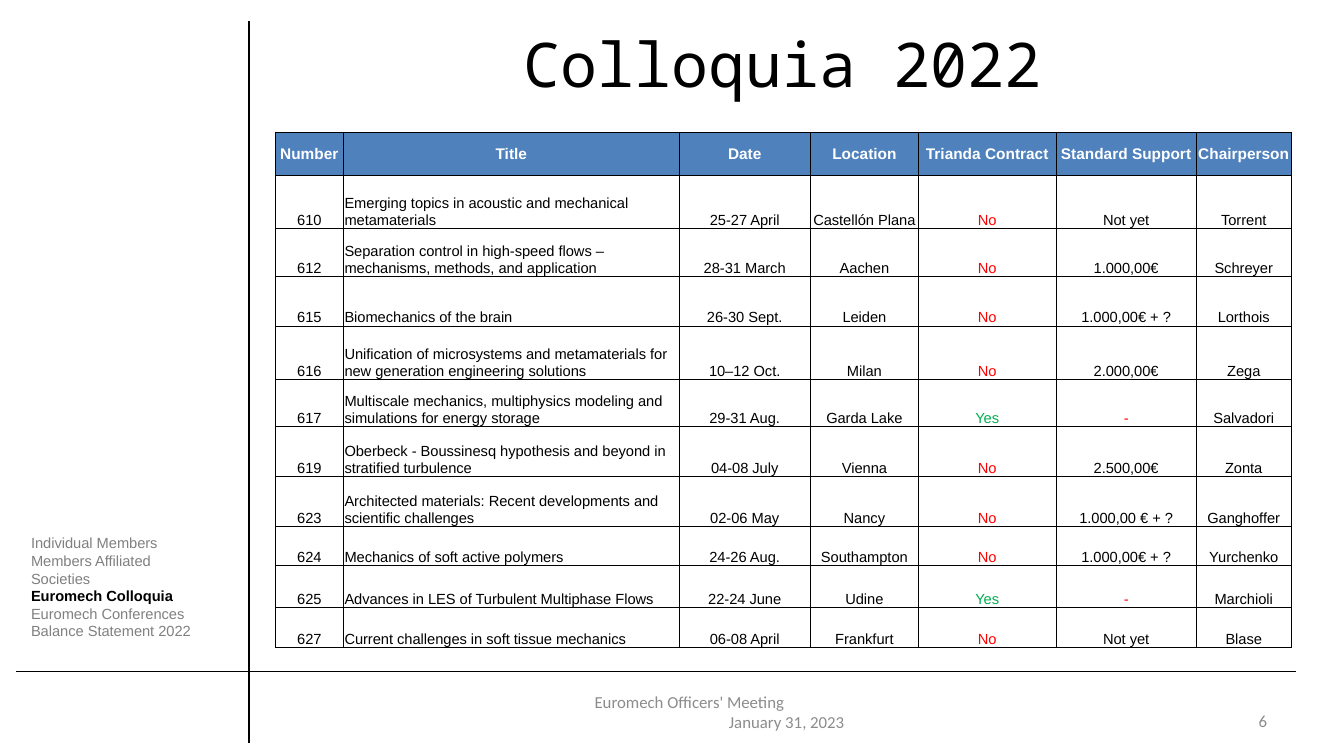
from dataclasses import dataclass

import pptx
import pptx.dml.color
import pptx.enum.dml
import pptx.enum.shapes
import pptx.enum.text
import pptx.oxml
import pptx.oxml.ns
import pptx.util

Pt = pptx.util.Pt
ALIGN = pptx.enum.text.PP_ALIGN
ANCHOR = pptx.enum.text.MSO_ANCHOR
FIT = pptx.enum.text.MSO_AUTO_SIZE

COLORS = {
    "ink": "000000", "white": "FFFFFF", "header": "4F81BD", "muted": "808080",
    "footer": "8C8C8C", "no": "FF0000", "yes": "00B050",
}


@dataclass
class Rule:
    x1: float
    y1: float
    x2: float
    y2: float


@dataclass
class Line:
    text: str
    color: str
    size: float
    font: str = "Arial"
    bold: bool = False
    align: ALIGN = ALIGN.LEFT
    indent: float = 0


@dataclass
class Box:
    left: float
    top: float
    width: float
    height: float
    lines: list[Line]
    anchor: ANCHOR = ANCHOR.TOP
    fit: FIT = FIT.NONE


@dataclass
class Colloquium:
    number: str
    title: str
    date: str
    location: str
    contract: str
    support: str
    chair: str
    height: float

    def texts(self) -> list[str]:
        return [self.number, self.title, self.date, self.location,
                self.contract, self.support, self.chair]


RULES = [Rule(178, 15, 178, 530.5), Rule(11.5, 479.5, 926, 479.5)]

TITLE = Box(224.6, 11.5, 668.9, 67, [
    Line("Colloquia 2022", "ink", 44, "Noto Sans Mono", align=ALIGN.CENTER)], ANCHOR.MIDDLE)

SECTIONS = ["Individual Members", "Members Affiliated Societies", "Euromech Colloquia",
            "Euromech Conferences", "Balance Statement 2022"]
CURRENT = "Euromech Colloquia"

BOXES = [
    Box(15.1, 378, 139, 83.5, [
        Line(t, "ink" if t == CURRENT else "muted", 10.5, bold=t == CURRENT)
        for t in SECTIONS], fit=FIT.SHAPE_TO_FIT_TEXT),
    Box(417.6, 494, 228.2, 28.8, [
        Line("Euromech Officers' Meeting", "footer", 12, "Calibri"),
        Line("January 31, 2023", "footer", 12, "Calibri", indent=96)], ANCHOR.MIDDLE),
    Box(688.3, 500.4, 223.9, 28.8, [
        Line("6", "footer", 12, "Calibri", align=ALIGN.RIGHT)], ANCHOR.MIDDLE),
]

TABLE_LEFT, TABLE_TOP = 196.5, 94.3
COLUMN_WIDTHS = [49, 239.5, 94, 77, 98.5, 100, 68]
HEADER = Colloquium("Number", "Title", "Date", "Location", "Trianda Contract",
                    "Standard Support", "Chairperson", 30.7)
COLLOQUIA = [
    Colloquium("610", "Emerging topics in acoustic and mechanical metamaterials",
               "25-27 April", "Castellón Plana", "No", "Not yet", "Torrent", 37.9),
    Colloquium("612", "Separation control in high-speed flows – mechanisms, methods, and application",
               "28-31 March", "Aachen", "No", "1.000,00€", "Schreyer", 34.3),
    Colloquium("615", "Biomechanics of the brain",
               "26-30 Sept.", "Leiden", "No", "1.000,00€ + ?", "Lorthois", 35.7),
    Colloquium("616", "Unification of microsystems and metamaterials for new generation engineering solutions",
               "10–12 Oct.", "Milan", "No", "2.000,00€", "Zega", 37.9),
    Colloquium("617", "Multiscale mechanics, multiphysics modeling and simulations for energy storage",
               "29-31 Aug.", "Garda Lake", "Yes", "-", "Salvadori", 33.6),
    Colloquium("619", "Oberbeck - Boussinesq hypothesis and beyond in stratified turbulence",
               "04-08 July", "Vienna", "No", "2.500,00€", "Zonta", 35.7),
    Colloquium("623", "Architected materials: Recent developments and scientific challenges",
               "02-06 May", "Nancy", "No", "1.000,00 € + ?", "Ganghoffer", 35.7),
    Colloquium("624", "Mechanics of soft active polymers",
               "24-26 Aug.", "Southampton", "No", "1.000,00€ + ?", "Yurchenko", 27.9),
    Colloquium("625", "Advances in LES of Turbulent Multiphase Flows",
               "22-24 June", "Udine", "Yes", "-", "Marchioli", 30),
    Colloquium("627", "Current challenges in soft tissue mechanics",
               "06-08 April", "Frankfurt", "No", "Not yet", "Blase", 28.6),
]
TEXT_COLORS = {"No": "no", "Yes": "yes", "-": "no"}


def rgb(name: str) -> pptx.dml.color.RGBColor:
    return pptx.dml.color.RGBColor.from_string(COLORS[name])


def set_attrs(target, values: dict) -> None:
    for name, value in values.items():
        setattr(target, name, value)


def write_lines(tf, lines: list[Line]) -> None:
    for i, line in enumerate(lines):
        p = tf.add_paragraph() if i else tf.paragraphs[0]
        p.alignment = line.align
        if line.indent:
            p._p.get_or_add_pPr().set("marL", str(Pt(line.indent)))
        r = p.add_run()
        r.text = line.text
        set_attrs(r.font, {"name": line.font, "size": Pt(line.size), "bold": line.bold})
        r.font.color.rgb = rgb(line.color)


def fill_box(sp, box: Box) -> None:
    set_attrs(sp, {"left": Pt(box.left), "top": Pt(box.top),
                   "width": Pt(box.width), "height": Pt(box.height)})
    tf = sp.text_frame
    set_attrs(tf, {"word_wrap": True, "auto_size": box.fit, "vertical_anchor": box.anchor})
    write_lines(tf, box.lines)


def add_rule(s, rule: Rule) -> None:
    sp = s.shapes.add_connector(pptx.enum.shapes.MSO_CONNECTOR.STRAIGHT,
                                Pt(rule.x1), Pt(rule.y1), Pt(rule.x2), Pt(rule.y2))
    sp.line.color.rgb = rgb("ink")
    sp.line.width = Pt(1)
    sp._element.spPr.append(pptx.oxml.parse_xml(
        f'<a:effectLst {pptx.oxml.ns.nsdecls("a")}/>'))


def add_borders(cell) -> None:
    tcPr = cell._tc.get_or_add_tcPr()
    for i, side in enumerate(("lnL", "lnR", "lnT", "lnB")):
        tcPr.insert(i, pptx.oxml.parse_xml(
            f'<a:{side} {pptx.oxml.ns.nsdecls("a")} w="{Pt(0.5)}"><a:solidFill>'
            f'<a:srgbClr val="{COLORS["ink"]}"/></a:solidFill></a:{side}>'))


def fill_cell(cell, text: str, is_header: bool, is_title: bool) -> None:
    set_attrs(cell, {"margin_left": Pt(0.6), "margin_right": Pt(0.6),
                     "margin_top": Pt(0.6), "margin_bottom": 0,
                     "vertical_anchor": ANCHOR.MIDDLE if is_header else ANCHOR.BOTTOM})
    if is_header:
        cell.fill.solid()
        cell.fill.fore_color.rgb = rgb("header")
        line = Line(text, "white", 11, bold=True, align=ALIGN.CENTER)
    else:
        cell.fill.background()
        line = Line(text, TEXT_COLORS.get(text, "ink"), 10.5,
                    align=ALIGN.LEFT if is_title else ALIGN.CENTER)
    write_lines(cell.text_frame, [line])
    add_borders(cell)


def add_colloquia_table(s) -> None:
    rows = [HEADER, *COLLOQUIA]
    table = s.shapes.add_table(
        len(rows), len(COLUMN_WIDTHS), Pt(TABLE_LEFT), Pt(TABLE_TOP),
        Pt(sum(COLUMN_WIDTHS)), Pt(sum(row.height for row in rows))).table
    table.horz_banding = False
    for column, width in zip(table.columns, COLUMN_WIDTHS):
        column.width = Pt(width)
    for i, row in enumerate(rows):
        table.rows[i].height = Pt(row.height)
        for j, text in enumerate(row.texts()):
            fill_cell(table.cell(i, j), text, i == 0, j == 1)


def main() -> None:
    prs = pptx.Presentation()
    set_attrs(prs, {"slide_width": Pt(960), "slide_height": Pt(540)})
    s = prs.slides.add_slide(prs.slide_layouts[5])
    for rule in RULES:
        add_rule(s, rule)
    fill_box(s.shapes.title, TITLE)
    add_colloquia_table(s)
    for box in BOXES:
        fill_box(s.shapes.add_textbox(0, 0, 0, 0), box)
    prs.save("out.pptx")


if __name__ == "__main__":
    main()
